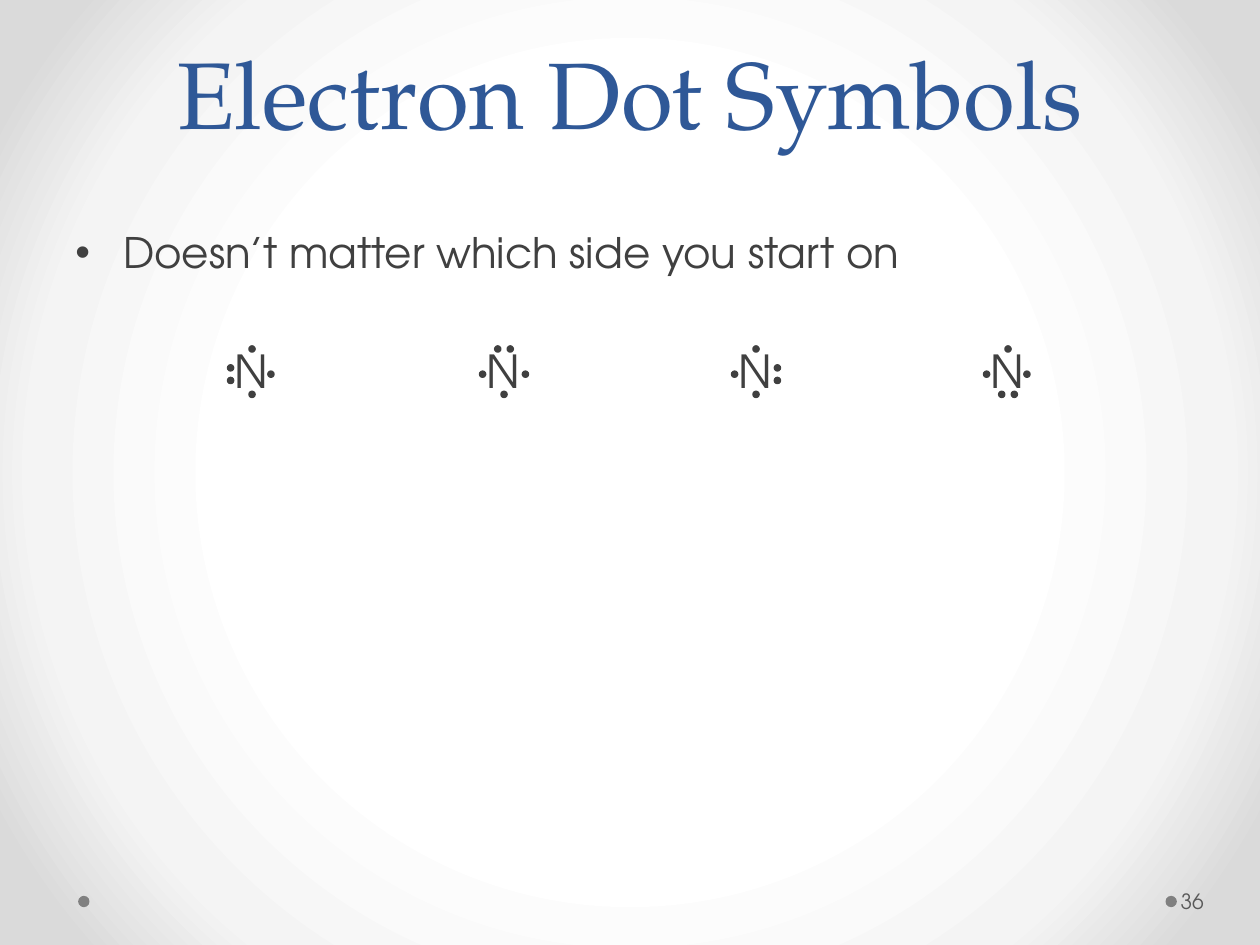
import dataclasses
import typing

import pptx
import pptx.dml.color
import pptx.enum.shapes
import pptx.enum.text
import pptx.oxml
import pptx.oxml.ns
import pptx.util

Inches = pptx.util.Inches
Pt = pptx.util.Pt
Align = pptx.enum.text.PP_ALIGN
Anchor = pptx.enum.text.MSO_ANCHOR


@dataclasses.dataclass(frozen=True)
class Theme:
    title_font: str = "TeX Gyre Pagella"
    body_font: str = "TeX Gyre Adventor"
    title_size: float = 54
    body_size: float = 24
    symbol_size: float = 26
    number_size: float = 12
    title: str = "2F5897"
    text: str = "404040"
    number: str = "595959"
    marker: str = "808080"
    background: tuple = ((50, "FFFFFF"), (76, "F4F4F4"), (92, "DADADA"))


@dataclasses.dataclass(frozen=True)
class Label:
    text: str
    box: tuple[float, float, float, float]
    font: str
    size: float
    color: str
    frame: dict[str, typing.Any] = dataclasses.field(default_factory=dict)
    para: dict[str, typing.Any] = dataclasses.field(default_factory=dict)


@dataclasses.dataclass(frozen=True)
class Atom:
    x: float
    pair_side: str
    right: float


THEME = Theme()
ATOM_Y = 2.97
DOT_SIZE = 0.05
PAIR_OFFSET = 0.05
ATOMS = [
    Atom(2, "left", 0.15),
    Atom(4, "top", 0.17),
    Atom(6, "right", 0.17),
    Atom(8, "bottom", 0.15),
]
TITLE = Label("Electron Dot Symbols", (0.5, 0.03, 9, 1.2),
              THEME.title_font, THEME.title_size, THEME.title,
              {"vertical_anchor": Anchor.BOTTOM},
              {"alignment": Align.CENTER, "line_spacing": Pt(58)})
BODY = Label("Doesn’t matter which side you start on", (0.5, 1.75, 9, 4.95),
             THEME.body_font, THEME.body_size, THEME.text,
             {}, {"space_before": Pt(4.8)})
NUMBER = Label("36", (9.34, 6.95, 0.61, 0.4),
               THEME.body_font, THEME.number_size, THEME.number,
               {"vertical_anchor": Anchor.MIDDLE, "margin_left": Inches(0.03),
                "margin_right": Inches(0.05)})
SYMBOLS = Label("\t\t".join("N" * len(ATOMS)), (1.59, 2.67, 6.83, 0.54),
                THEME.body_font, THEME.symbol_size, THEME.text,
                {"margin_left": Inches(0.27)}, {"alignment": Align.LEFT})


def rgb(color: str) -> pptx.dml.color.RGBColor:
    return pptx.dml.color.RGBColor.from_string(color)


def set_all(obj: typing.Any, values: dict[str, typing.Any]) -> None:
    for name, value in values.items():
        setattr(obj, name, value)


def set_background(s: typing.Any) -> None:
    fill = s.background.fill
    fill.gradient()
    grad = s.element.find(".//" + pptx.oxml.ns.qn("a:gradFill"))
    stops = "".join(
        f'<a:gs pos="{pos * 1000}"><a:srgbClr val="{color}"/></a:gs>'
        for pos, color in THEME.background)
    radial = pptx.oxml.parse_xml(
        f'<a:gradFill {pptx.oxml.ns.nsdecls("a")} rotWithShape="1">'
        f'<a:gsLst>{stops}</a:gsLst><a:path path="circle">'
        '<a:fillToRect l="50000" t="50000" r="50000" b="50000"/>'
        '</a:path></a:gradFill>')
    grad.getparent().replace(grad, radial)


def add_label(s: typing.Any, label: Label) -> typing.Any:
    sp = s.shapes.add_textbox(*map(Inches, label.box))
    tf = sp.text_frame
    set_all(tf, {"word_wrap": True, **label.frame})
    p = tf.paragraphs[0]
    set_all(p, label.para)
    r = p.add_run()
    r.text = label.text
    set_all(r.font, {"name": label.font, "size": Pt(label.size)})
    r.font.color.rgb = rgb(label.color)
    return p


def append_xml(p: typing.Any, *parts: str) -> None:
    for part in parts:
        xml = part.format(ns=pptx.oxml.ns.nsdecls("a"))
        p._p.get_or_add_pPr().append(pptx.oxml.parse_xml(xml))


def add_bullet(p: typing.Any) -> None:
    ppr = p._p.get_or_add_pPr()
    ppr.set("marL", str(Inches(0.38)))
    ppr.set("indent", str(Inches(-0.38)))
    append_xml(p, '<a:buFont {ns} typeface="Arial"/>', '<a:buChar {ns} char="•"/>')


def add_tab_stops(p: typing.Any, count: int, step: float) -> None:
    stops = "".join(f'<a:tab pos="{Inches(step * i)}" algn="l"/>'
                    for i in range(1, count + 1))
    append_xml(p, "<a:tabLst {ns}>" + stops + "</a:tabLst>")


def add_dot(s: typing.Any, x: float, y: float, size: float, color: str,
            outlined: bool = False) -> None:
    sp = s.shapes.add_shape(
        pptx.enum.shapes.MSO_SHAPE.OVAL,
        Inches(x - size / 2), Inches(y - size / 2), Inches(size), Inches(size))
    sp.shadow.inherit = False
    sp.fill.solid()
    sp.fill.fore_color.rgb = rgb(color)
    if outlined:
        sp.line.color.rgb = rgb(color)
        sp.line.width = Pt(0.75)
    else:
        sp.line.fill.background()


def add_electrons(s: typing.Any, atom: Atom) -> None:
    sides = {"left": (-0.17, 0), "top": (0, -0.2),
             "right": (atom.right, 0), "bottom": (0, 0.16)}
    for side, (dx, dy) in sides.items():
        shifts = (-PAIR_OFFSET, PAIR_OFFSET) if side == atom.pair_side else (0,)
        for shift in shifts:
            along_x, along_y = (shift, 0) if side in ("top", "bottom") else (0, shift)
            add_dot(s, atom.x + dx + along_x, ATOM_Y + dy + along_y,
                    DOT_SIZE, THEME.text, outlined=True)


def main() -> None:
    prs = pptx.Presentation()
    set_all(prs, {"slide_width": Inches(10), "slide_height": Inches(7.5)})
    s = prs.slides.add_slide(prs.slide_layouts[6])
    set_background(s)
    for x in (9.295, 0.665):
        add_dot(s, x, 7.155, 0.09, THEME.marker)
    add_label(s, TITLE)
    add_bullet(add_label(s, BODY))
    add_label(s, NUMBER)
    add_tab_stops(add_label(s, SYMBOLS), SYMBOLS.text.count("\t"), 1)
    for atom in ATOMS:
        add_electrons(s, atom)
    prs.save("out.pptx")


if __name__ == "__main__":
    main()
